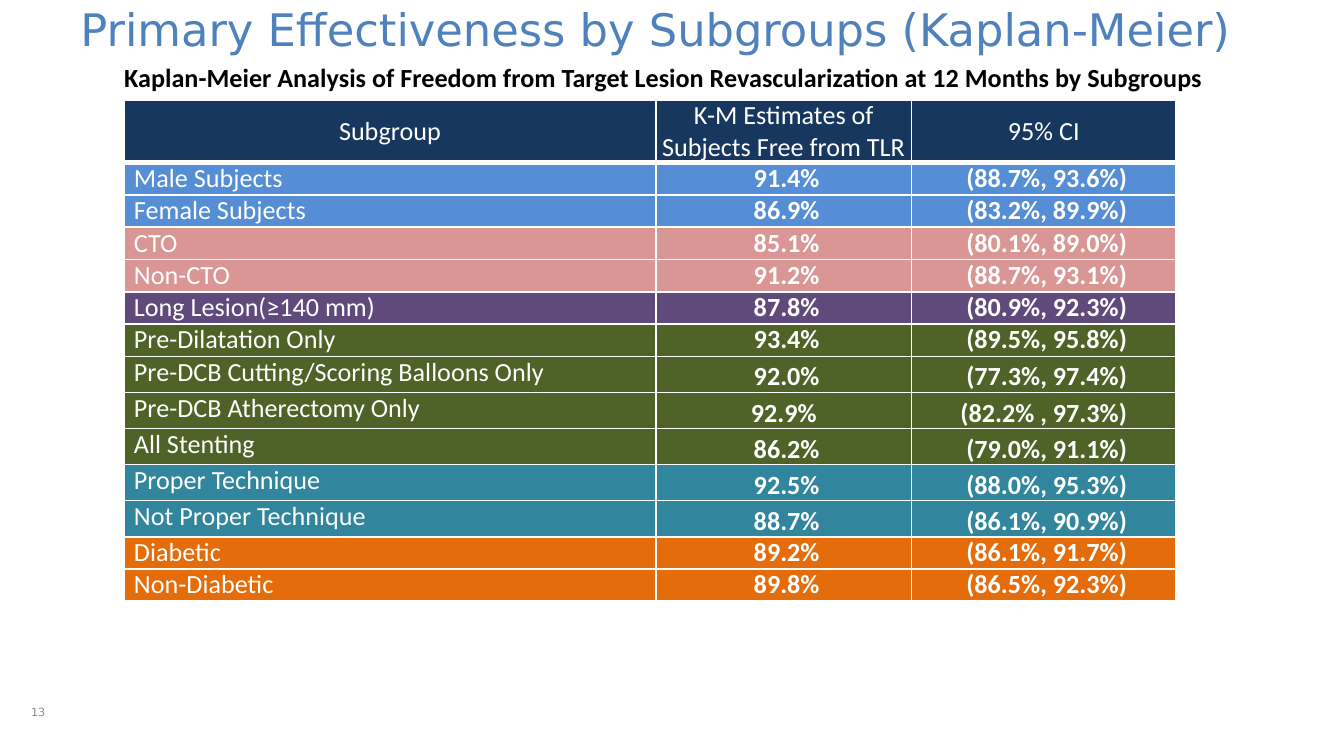
import pptx
import pptx.dml.color
import pptx.enum.text
import pptx.oxml
import pptx.oxml.ns
import pptx.util

Pt = pptx.util.Pt
ALIGN = pptx.enum.text.PP_ALIGN
ANCHOR = pptx.enum.text.MSO_ANCHOR

COLORS = {
    "title": "4F81BD", "number": "8C8C8E", "black": "000000", "white": "FFFFFF",
    "header": "17375E", "sex": "558ED5", "occlusion": "D99694", "length": "604A7B",
    "preparation": "4F6228", "technique": "31859C", "diabetes": "E46C0A",
}
HEADINGS = ["Subgroup", "K-M Estimates of Subjects Free from TLR", "95% CI"]
# Colour group, subgroup, estimate, confidence interval, line spacing of the values
SUBGROUPS = [
    ("sex", "Male Subjects", " 91.4%", " (88.7%, 93.6%)", 1.0),
    ("sex", "Female Subjects", " 86.9%", " (83.2%, 89.9%)", 1.0),
    ("occlusion", "CTO", " 85.1%", " (80.1%, 89.0%)", 1.0),
    ("occlusion", "Non-CTO", " 91.2%", " (88.7%, 93.1%)", 1.0),
    ("length", "Long Lesion(≥140 mm)", " 87.8%", " (80.9%, 92.3%)", 1.0),
    ("preparation", "Pre-Dilatation Only", " 93.4%", " (89.5%, 95.8%)", 1.0),
    ("preparation", "Pre-DCB Cutting/Scoring Balloons Only", " 92.0%", " (77.3%, 97.4%)", 1.15),
    ("preparation", "Pre-DCB Atherectomy Only", "92.9%", "(82.2% , 97.3%)", 1.15),
    ("preparation", "All Stenting", " 86.2%", " (79.0%, 91.1%)", 1.15),
    ("technique", "Proper Technique", " 92.5%", " (88.0%, 95.3%)", 1.15),
    ("technique", "Not Proper Technique", " 88.7%", " (86.1%, 90.9%)", 1.15),
    ("diabetes", "Diabetic", " 89.2%", " (86.1%, 91.7%)", 1.0),
    ("diabetes", "Non-Diabetic", " 89.8%", " (86.5%, 92.3%)", 1.0),
]
COLUMN_WIDTHS = [285.1, 136.8, 141.9]
HEADER_HEIGHT, ROW_HEIGHT = 28.8, 17.3


def rgb(color):
    return pptx.dml.color.RGBColor.from_string(COLORS[color])


def add_run(paragraph, text, size, font, color, bold=False):
    run = paragraph.add_run()
    run.text = text
    run.font.size = Pt(size)
    run.font.name = font
    run.font.bold = bold
    run.font.color.rgb = rgb(color)


def add_text(slide, box, text, size, font, color, align, anchor, bold=False):
    frame = slide.shapes.add_textbox(*map(Pt, box)).text_frame
    frame.word_wrap = True
    frame.vertical_anchor = anchor
    paragraph = frame.paragraphs[0]
    paragraph.alignment = align
    add_run(paragraph, text, size, font, color, bold)


def set_borders(cell, bottom):
    """Give the cell white borders of 1 pt, with its own width at the bottom."""
    properties = cell._tc.get_or_add_tcPr()
    for side, width in (("L", 1), ("R", 1), ("T", 1), ("B", bottom)):
        properties.append(pptx.oxml.parse_xml(
            f'<a:ln{side} {pptx.oxml.ns.nsdecls("a")} w="{Pt(width)}"><a:solidFill>'
            f'<a:srgbClr val="{COLORS["white"]}"/></a:solidFill></a:ln{side}>'))


def fill_cell(cell, text, fill, align=ALIGN.CENTER, anchor=ANCHOR.TOP, left=0.7,
              bold=False, spacing=1.0, bottom=1):
    set_borders(cell, bottom)
    cell.fill.solid()
    cell.fill.fore_color.rgb = rgb(fill)
    cell.vertical_anchor = anchor
    cell.margin_left, cell.margin_right = Pt(left), Pt(0.7)
    cell.margin_top = cell.margin_bottom = Pt(0)
    paragraph = cell.text_frame.paragraphs[0]
    paragraph.alignment = align
    paragraph.line_spacing = spacing
    paragraph.space_before = paragraph.space_after = Pt(0.5)
    add_run(paragraph, text, 14, "Calibri", "white", bold)


def add_subgroup_table(slide):
    height = HEADER_HEIGHT + ROW_HEIGHT * len(SUBGROUPS)
    table = slide.shapes.add_table(
        len(SUBGROUPS) + 1, len(HEADINGS),
        Pt(66.4), Pt(53.5), Pt(sum(COLUMN_WIDTHS)), Pt(height)).table
    for column, width in zip(table.columns, COLUMN_WIDTHS):
        column.width = Pt(width)
    for index, row in enumerate(table.rows):
        row.height = Pt(ROW_HEIGHT if index else HEADER_HEIGHT)

    for column, heading in enumerate(HEADINGS):
        fill_cell(table.cell(0, column), heading, "header", anchor=ANCHOR.MIDDLE, bottom=3)
    for row, (group, subgroup, estimate, interval, spacing) in enumerate(SUBGROUPS, 1):
        fill_cell(table.cell(row, 0), subgroup, group, align=ALIGN.LEFT, left=5.4)
        anchor = ANCHOR.TOP if estimate.startswith(" ") else ANCHOR.MIDDLE
        for column, value in enumerate((estimate, interval), 1):
            fill_cell(table.cell(row, column), value, group, anchor=anchor,
                      bold=True, spacing=spacing)


def main():
    presentation = pptx.Presentation()
    presentation.slide_width, presentation.slide_height = Pt(720), Pt(405)
    slide = presentation.slides.add_slide(presentation.slide_layouts[6])
    add_text(slide, (36, -7.2, 648, 40.3), "Primary Effectiveness by Subgroups (Kaplan-Meier)",
             24, "DejaVu Sans", "title", ALIGN.LEFT, ANCHOR.BOTTOM)
    add_text(slide, (0, 363.6, 41, 35.3), "13",
             6, "DejaVu Sans", "number", ALIGN.CENTER, ANCHOR.MIDDLE)
    add_subgroup_table(slide)
    add_text(slide, (54, 29.5, 606.2, 24.5),
             "Kaplan-Meier Analysis of Freedom from Target Lesion Revascularization "
             "at 12 Months by Subgroups ",
             14, "Calibri", "black", ALIGN.CENTER, ANCHOR.TOP, bold=True)
    presentation.save("out.pptx")


if __name__ == "__main__":
    main()
